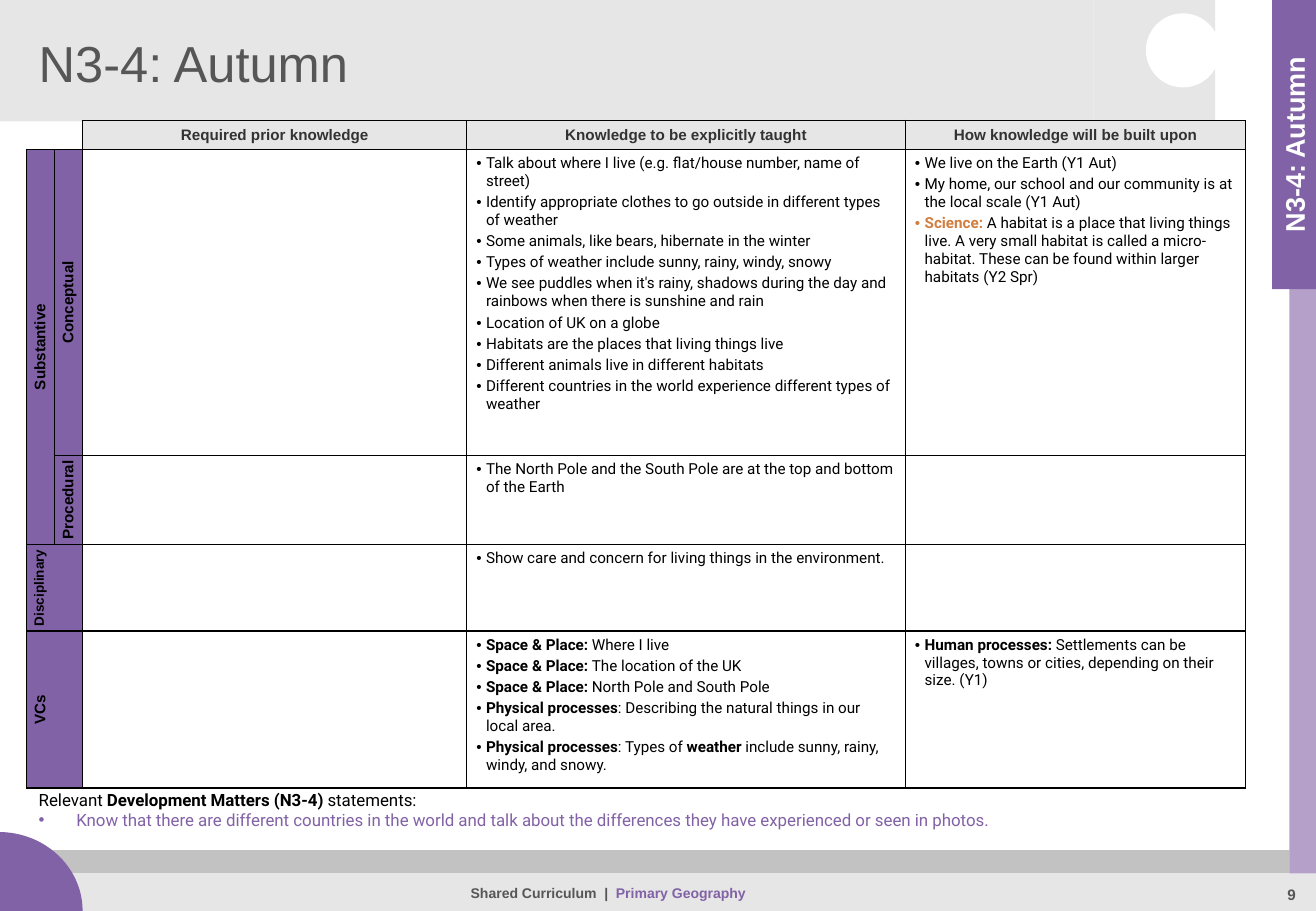
from dataclasses import dataclass

from lxml import etree
from pptx import Presentation
from pptx.dml.color import RGBColor
from pptx.enum.shapes import MSO_CONNECTOR, MSO_SHAPE
from pptx.enum.text import MSO_ANCHOR, PP_ALIGN
from pptx.oxml.ns import qn
from pptx.util import Inches, Pt

ARC, OVAL, RECT = MSO_SHAPE.ARC, MSO_SHAPE.OVAL, MSO_SHAPE.RECTANGLE
STRAIGHT = MSO_CONNECTOR.STRAIGHT
TOP, MIDDLE = MSO_ANCHOR.TOP, MSO_ANCHOR.MIDDLE
LEFT, CENTER = PP_ALIGN.LEFT, PP_ALIGN.CENTER

WIDTH, HEIGHT = 10.83, 7.5
UNIT = "N3-4: Autumn"
SCIENCE = "Science: "
COLUMNS = [0.23, 0.23, 3.16, 3.61, 2.8]
ROWS = [0.24, 2.52, 0.72, 0.7, 1.29]
HEADERS = ["Required prior knowledge", "Knowledge to be explicitly taught",
           "How knowledge will be built upon"]

# Text between ** marks is bold.
TAUGHT = [
    ["Talk about where I live (e.g. flat/house number, name of street)",
     "Identify appropriate clothes to go outside in different types of weather",
     "Some animals, like bears, hibernate in the winter",
     "Types of weather include sunny, rainy, windy, snowy",
     "We see puddles when it's rainy, shadows during the day and rainbows "
     "when there is sunshine and rain",
     "Location of UK on a globe",
     "Habitats are the places that living things live",
     "Different animals live in different habitats",
     "Different countries in the world experience different types of weather"],
    ["The North Pole and the South Pole are at the top and bottom of the Earth"],
    ["Show care and concern for living things in the environment."],
    ["**Space & Place: **Where I live",
     "**Space & Place: **The location of the UK",
     "**Space & Place: **North Pole and South Pole",
     "**Physical processes**: Describing the natural things in our local area.",
     "**Physical processes**: Types of **weather** include sunny, rainy, "
     "windy, and snowy."],
]
BUILT_UPON = [
    ["We live on the Earth (Y1 Aut)",
     "My home, our school and our community is at the local scale (Y1 Aut)",
     f"**{SCIENCE}**A habitat is a place that living things live. A very small "
     "habitat is called a micro-habitat. These can be found within larger "
     "habitats (Y2 Spr)"],
    [],
    [],
    ["**Human processes: **Settlements can be villages, towns or cities, "
     "depending on their size. (Y1)"],
]


@dataclass(frozen=True)
class Theme:
    purple: str = "8262A6"
    orange: str = "D17E3F"
    frame: str = "C2C2C2"
    panel: str = "E6E6E6"
    heading: str = "565656"
    header: str = "323232"
    black: str = "000000"
    white: str = "FFFFFF"
    head_font: str = "Arial"
    body_font: str = "Roboto"
    title: float = 30
    tab: float = 16
    note: float = 10
    body: float = 9
    footer: float = 8.3
    small: float = 8
    tint: int = 60


class Page:
    def __init__(self, slide, theme):
        self.slide, self.theme = slide, theme
        self.shapes = slide.shapes

    def paint(self, fill, color, opacity=100):
        fill.solid()
        fill.fore_color.rgb = RGBColor.from_string(color)
        if opacity < 100:
            rgb = fill._xPr.find(".//" + qn("a:srgbClr"))
            etree.SubElement(rgb, qn("a:alpha"), val=str(opacity * 1000))

    def finish(self, shape, color, opacity=100):
        shape.shadow.inherit = False
        self.paint(shape.fill, color, opacity)
        shape.line.fill.background()

    def shape(self, preset, box, color, opacity=100):
        shape = self.shapes.add_shape(preset, *map(Inches, box))
        self.finish(shape, color, opacity)

    def outline(self, contours, color):
        """Fill closed contours; a second contour cuts a hole."""
        first, *holes = contours
        builder = self.shapes.build_freeform(*first[0], scale=Inches(1))
        builder.add_line_segments(first[1:])
        for hole in holes:
            builder.move_to(*hole[0])
            builder.add_line_segments(hole[1:])
        self.finish(builder.convert_to_shape(), color)

    def rule(self, start, end, color, width):
        line = self.shapes.add_connector(STRAIGHT, *map(Inches, start + end))
        line.line.color.rgb = RGBColor.from_string(color)
        line.line.width = Pt(width)
        etree.SubElement(line._element.spPr, qn("a:effectLst"))

    def add_runs(self, paragraph, text, size, font, color, bold=False, align=LEFT,
                 accents=None):
        """Add text, turning bold on or off at each ** mark."""
        paragraph.alignment = align
        for index, part in enumerate(text.split("**")):
            if not part:
                continue
            run = paragraph.add_run()
            run.text = part
            run.font.size, run.font.name = Pt(size), font
            run.font.bold = bold or index % 2 == 1
            run.font.color.rgb = RGBColor.from_string(
                (accents or {}).get(part, color))

    def bullet(self, paragraph, indent):
        props = paragraph._p.get_or_add_pPr()
        props.set("marL", str(Inches(indent)))
        props.set("indent", str(-Inches(indent)))
        etree.SubElement(props, qn("a:buFont"), typeface="Arial")
        etree.SubElement(props, qn("a:buChar"), char="•")

    def text(self, box, text, size, font, color, anchor=MIDDLE, rotation=0, **style):
        label = self.shapes.add_textbox(*map(Inches, box))
        label.rotation = rotation
        frame = label.text_frame
        frame.word_wrap, frame.vertical_anchor = True, anchor
        self.add_runs(frame.paragraphs[0], text, size, font, color, **style)
        return frame

    def table(self, corner, columns, rows):
        box = (*corner, sum(columns), sum(rows))
        table = self.shapes.add_table(len(rows), len(columns),
                                      *map(Inches, box)).table
        table.first_row = table.horz_banding = False
        for column, width in zip(table.columns, columns):
            column.width = Inches(width)
        for row, height in zip(table.rows, rows):
            row.height = Inches(height)
        return table

    def cell(self, cell, color=None, opacity=100, sides="LRTB", side_margin=0.04):
        """Set margins, borders on the given sides, fill and empty-text size."""
        cell.margin_left = cell.margin_right = Inches(side_margin)
        cell.margin_top = cell.margin_bottom = Inches(0.04)
        props = cell._tc.get_or_add_tcPr()
        for side in "LRTB":
            line = etree.SubElement(props, qn("a:ln" + side), w=str(Pt(1)))
            if side in sides:
                solid = etree.SubElement(line, qn("a:solidFill"))
                etree.SubElement(solid, qn("a:srgbClr"), val=self.theme.black)
            else:
                etree.SubElement(line, qn("a:noFill"))
        if color:
            self.paint(cell.fill, color, opacity)
        else:
            cell.fill.background()
        etree.SubElement(cell.text_frame.paragraphs[0]._p, qn("a:endParaRPr"),
                         sz=str(int(self.theme.body * 100)))

    def label_cell(self, cell, text, color, size, upright=True):
        cell.vertical_anchor = MIDDLE
        if not upright:
            cell._tc.get_or_add_tcPr().set("vert", "vert270")
        self.add_runs(cell.text_frame.paragraphs[0], text, size,
                      self.theme.head_font, color, bold=True, align=CENTER)

    def bullet_cell(self, cell, items):
        t, frame = self.theme, cell.text_frame
        for index, item in enumerate(items):
            paragraph = frame.add_paragraph() if index else frame.paragraphs[0]
            self.bullet(paragraph, 0.08)
            paragraph.space_after = Pt(2)
            self.add_runs(paragraph, item, t.body, t.body_font, t.black,
                          accents={SCIENCE: t.orange})


def add_backdrop(page):
    t = page.theme
    page.outline([[(0, 0), (WIDTH, 0), (WIDTH, HEIGHT), (0, HEIGHT), (0, 0)],
                  [(0.1, 0.1), (0.1, 7.41), (10.73, 7.41), (10.73, 0.1), (0.1, 0.1)]],
                 t.frame)
    page.shape(RECT, (0.32, 7.18, WIDTH - 0.32, HEIGHT - 7.18), t.panel)
    page.rule((0.05, 7.14), (WIDTH, 7.14), t.frame, 7)
    page.shape(ARC, (-0.7, 6.85, 1.38, 1.3), t.purple)
    footer = page.text((2.05, 7.21, 5.91, 0.3), "Shared Curriculum  |  **Primary Geography",
                       t.footer, t.head_font, t.heading, bold=True, align=CENTER,
                       accents={"Primary Geography": t.purple})
    footer.paragraphs[0].line_spacing = 0.9
    page.outline([[(0, 0.2), (0, 0.81), (8.87, 0.81), (8.77, 0.21), (0, 0.2)]], t.panel)
    side_band = (10.61, 0, WIDTH - 10.61, 7.19)
    page.shape(RECT, side_band, t.white)
    page.shape(RECT, side_band, t.purple, t.tint)
    page.shape(RECT, (10.47, 0, WIDTH - 10.47, 2.38), t.purple)
    number = page.text((10.31, 7.21, 0.64, 0.28), "9", t.body, t.head_font, t.heading,
                       anchor=TOP, bold=True, align=CENTER)
    number.paragraphs[0].line_spacing = 1.2
    page.outline([[(9.14, 0.81), (10.3, 0.81), (10.28, 0), (9.17, 0), (9.14, 0.81)]],
                 t.panel)
    page.shape(OVAL, (9.43, 0.11, 0.61, 0.61), t.white)


def add_knowledge_table(page):
    t = page.theme
    table = page.table((0.22, 0.99), COLUMNS, ROWS)
    for column, sides in enumerate(("B", "RB")):
        page.cell(table.cell(0, column), sides=sides)
        for row in range(1, len(ROWS)):
            page.cell(table.cell(row, column), t.purple, t.tint)
    for column, heading in enumerate(HEADERS, 2):
        page.cell(table.cell(0, column), t.panel)
        page.label_cell(table.cell(0, column), heading, t.header, t.body)
    for row, contents in enumerate(zip([[]] * 4, TAUGHT, BUILT_UPON), 1):
        for column, items in enumerate(contents, 2):
            page.cell(table.cell(row, column), t.white, side_margin=0.08)
            page.bullet_cell(table.cell(row, column), items)
    for start, end in (((1, 0), (2, 0)), ((3, 0), (3, 1)), ((4, 0), (4, 1))):
        table.cell(*start).merge(table.cell(*end))
    for row, column, text, size in ((1, 0, "Substantive", t.body),
                                    (1, 1, "Conceptual", t.body),
                                    (2, 1, "Procedural", t.body),
                                    (3, 0, "Disciplinary", t.small),
                                    (4, 0, "VCs", t.body)):
        page.label_cell(table.cell(row, column), text, t.black, size, upright=False)


def main():
    deck = Presentation()
    deck.slide_width, deck.slide_height = Inches(WIDTH), Inches(HEIGHT)
    t = Theme()
    page = Page(deck.slides.add_slide(deck.slide_layouts[6]), t)
    add_backdrop(page)
    page.text((0.22, 0.26, 3.83, 0.5), UNIT, t.title, t.head_font, t.heading)
    page.text((9.46, 1.02, 2.38, 0.34), UNIT, t.tab, t.head_font, t.white,
              rotation=270, bold=True, align=CENTER)
    statements = page.text((0.22, 6.45, 9.02, 0.34),
                           "Relevant **Development Matters (N3-4) **statements:",
                           t.note, t.body_font, t.black, anchor=TOP)
    statement = statements.add_paragraph()
    page.bullet(statement, 0.31)
    page.add_runs(statement, "Know that there are different countries in the world and "
                  "talk about the differences they have experienced or seen in photos.",
                  t.note, t.body_font, t.purple)
    add_knowledge_table(page)
    deck.save("out.pptx")


if __name__ == "__main__":
    main()
